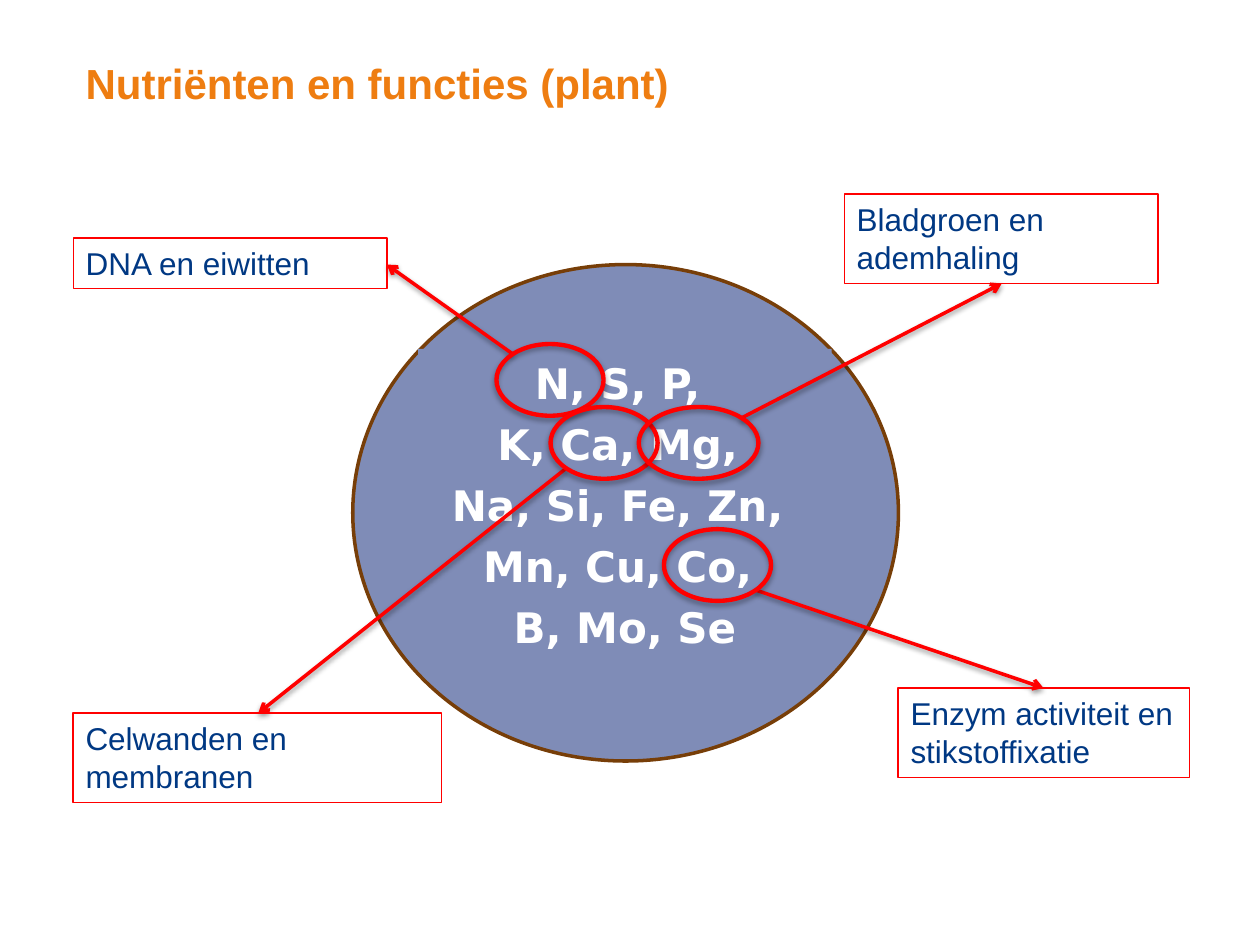
from lxml.etree import SubElement
from pptx import Presentation
from pptx.dml.color import RGBColor
from pptx.enum.shapes import MSO_CONNECTOR as Connector, MSO_SHAPE as Shape
from pptx.enum.text import MSO_ANCHOR as Anchor, MSO_AUTO_SIZE as AutoSize, PP_ALIGN as Align
from pptx.oxml.ns import qn
from pptx.util import Pt

ORANGE = RGBColor(0xEE, 0x7D, 0x11)
SLATE = RGBColor(0x7F, 0x8C, 0xB7)
BROWN = RGBColor(0x77, 0x3E, 0x08)
RED = RGBColor(0xFF, 0x00, 0x00)
NAVY = RGBColor(0x00, 0x38, 0x83)
WHITE = RGBColor(0xFF, 0xFF, 0xFF)


class NutrientSlide:
    text_font = "Arial"
    element_font = "DejaVu Sans"

    def __init__(self, deck):
        self.shapes = deck.slides.add_slide(deck.slide_layouts[6]).shapes

    def add_text(self, paragraph, text, font, size, color, bold=False):
        run = paragraph.add_run()
        run.text = text
        run.font.name = font
        run.font.size = Pt(size)
        run.font.bold = bold
        run.font.color.rgb = color

    def shadow(self, shape, opacity, distance):
        properties = shape._element.spPr
        for inherited in properties.findall(qn("a:effectLst")):
            properties.remove(inherited)
        effects = SubElement(properties, qn("a:effectLst"))
        outer = SubElement(effects, qn("a:outerShdw"), blurRad=str(Pt(3.1)),
                           dist=str(Pt(distance)), dir="5400000", rotWithShape="0")
        black = SubElement(outer, qn("a:srgbClr"), val="000000")
        SubElement(black, qn("a:alpha"), val=str(opacity * 1000))

    def title(self, text, box):
        frame = self.shapes.add_textbox(*map(Pt, box)).text_frame
        frame.word_wrap = True
        self.add_text(frame.paragraphs[0], text, self.text_font, 24, ORANGE, bold=True)

    def area(self, kind, box, fill=None, line=None, width=0):
        area = self.shapes.add_shape(kind, *map(Pt, box))
        area.shadow.inherit = False
        if fill is None:
            area.fill.background()
        else:
            area.fill.solid()
            area.fill.fore_color.rgb = fill
        if line is None:
            area.line.fill.background()
        else:
            area.line.color.rgb = line
            area.line.width = Pt(width)
        return area

    def elements(self, rows, box):
        frame = self.area(Shape.RECTANGLE, box, fill=SLATE).text_frame
        frame.word_wrap = True
        frame.vertical_anchor = Anchor.MIDDLE
        frame.margin_left = frame.margin_right = Pt(2.16)
        frame.margin_top = frame.margin_bottom = Pt(2.16)
        for index, row in enumerate(rows):
            paragraph = frame.add_paragraph() if index else frame.paragraphs[0]
            paragraph.alignment = Align.CENTER
            paragraph.line_spacing = 0.9
            paragraph.space_after = Pt(9)
            self.add_text(paragraph, row, self.element_font, 24, WHITE, bold=True)

    def arrow(self, start, end):
        arrow = self.shapes.add_connector(Connector.STRAIGHT, *map(Pt, start + end))
        arrow.line.color.rgb = RED
        arrow.line.width = Pt(2)
        SubElement(arrow.line._get_or_add_ln(), qn("a:tailEnd"), type="arrow")
        self.shadow(arrow, 38, 1.6)

    def ring(self, box):
        ring = self.area(Shape.OVAL, box, line=RED, width=2.5)
        self.shadow(ring, 35, 1.8)

    def label(self, text, box):
        frame = self.area(Shape.RECTANGLE, box, line=RED, width=0.75).text_frame
        frame.word_wrap = True
        frame.auto_size = AutoSize.SHAPE_TO_FIT_TEXT
        frame.vertical_anchor = Anchor.TOP
        frame.paragraphs[0].alignment = Align.LEFT
        self.add_text(frame.paragraphs[0], text, self.text_font, 18, NAVY)

    def function(self, text, label_box, ring_box, start, end):
        self.arrow(start, end)
        self.ring(ring_box)
        self.label(text, label_box)


def main():
    deck = Presentation()
    deck.slide_width, deck.slide_height = Pt(720), Pt(540)
    slide = NutrientSlide(deck)
    slide.title("Nutriënten en functies (plant)", (41.8, 29.5, 433.4, 41))
    slide.area(Shape.OVAL, (201.6, 151.2, 311.8, 283.7), SLATE, BROWN, 2)
    slide.elements(
        ("N, S, P, ", "K, Ca, Mg, ", "Na, Si, Fe, Zn, ", "Mn, Cu, Co, ", "B, Mo, Se"),
        (239, 199.4, 236.2, 181.4))

    functions = (
        ("DNA en eiwitten", (41.8, 136.1, 179.3, 28.8),
         (283.7, 196.6, 61.2, 41), (293, 202.3), (221, 151.2)),
        ("Celwanden en membranen", (41.8, 407.5, 210.6, 51.1),
         (314.6, 232.6, 61.2, 41), (323.3, 267.8), (147.6, 407.5)),
        ("Bladgroen en ademhaling", (482.4, 110.9, 179.3, 51.1),
         (365, 232.6, 68.4, 41), (423.4, 239), (572.4, 162)),
        ("Enzym activiteit en stikstoffixatie", (513.2, 393.1, 166.6, 51.1),
         (379.4, 302.4, 61.2, 41), (431.3, 337), (596.2, 393.1)),
    )
    for function in functions:
        slide.function(*function)
    deck.save("out.pptx")


if __name__ == "__main__":
    main()
